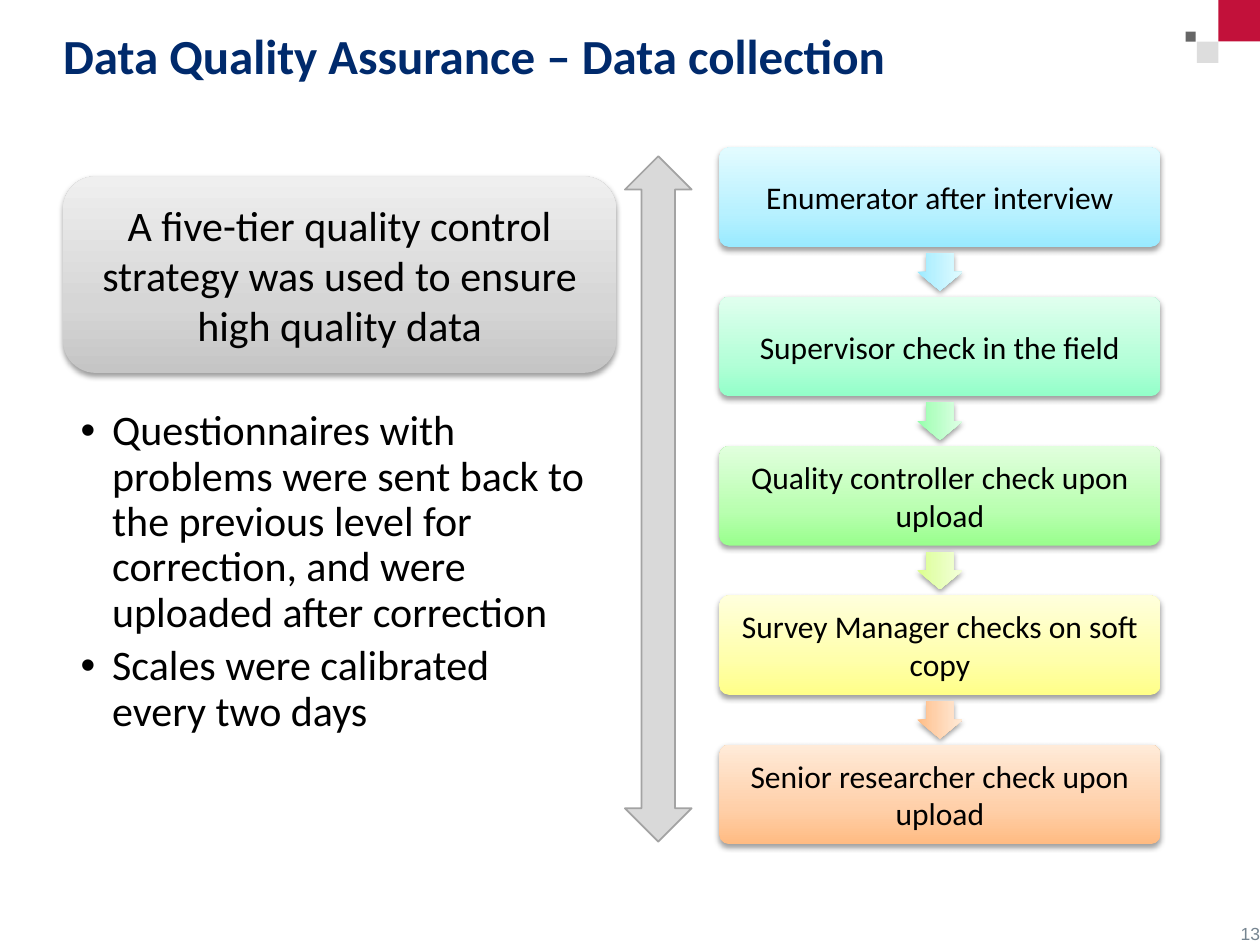
from copy import deepcopy

from lxml import etree
from pptx import Presentation
from pptx import util as u
from pptx.dml import color
from pptx.enum import shapes, text
from pptx.oxml import ns

BLACK = "000000"
GREY = ("C5C5C5", "D6D6D6", "EFEFEF")
BLUE = ("99EAFF", "B8F1FF", "E2FBFF")
ORANGE = ("FFBB82", "FFCFA8", "FFEBD9")
STEPS = [
    ("Enumerator after interview", BLUE, BLUE),
    ("Supervisor check in the field", ("93FFC9", "B4FFD8", "E0FFEE"),
     ("92FFAA", "B3FFC2", "E0FFE7")),
    ("Quality controller check upon upload", ("99FF8D", "B9FFB0", "E1FFDD"),
     ("DCFF8A", "E3FFAE", "F5FFDC")),
    ("Survey Manager checks on soft copy", ("FFFF88", "FFFFAB", "FFFFDC"), ORANGE),
    ("Senior researcher check upon upload", ORANGE, None),
]
BULLETS = [
    "Questionnaires with problems were sent back to the previous level for "
    "correction, and were uploaded after correction",
    "Scales were calibrated every two days",
]


def rgb(value):
    return color.RGBColor.from_string(value)


def inches(values):
    return [u.Inches(value) for value in values]


def add_child(parent, tag, **attributes):
    return etree.SubElement(parent, ns.qn(tag), attributes)


def add_shape(page, kind, place, adjustments=()):
    shape = page.shapes.add_shape(kind, *inches(place))
    shape.shadow.inherit = False
    for index, value in enumerate(adjustments):
        shape.adjustments[index] = value
    return shape


def add_flat(page, kind, place, fill, line=None):
    shape = add_shape(page, kind, place)
    shape.fill.solid()
    shape.fill.fore_color.rgb = rgb(fill)
    if line:
        shape.line.color.rgb = rgb(line)
        shape.line.width = u.Pt(1)
    else:
        shape.line.fill.background()
    return shape


def add_glossy(page, kind, place, adjustments, colours):
    shape = add_shape(page, kind, place, adjustments)
    shape.line.fill.background()
    shape.fill.gradient()
    shape.fill.gradient_angle = 90
    properties = shape._element.spPr
    stop_list = properties.find(".//" + ns.qn("a:gsLst"))
    stop_list.insert(1, deepcopy(stop_list[0]))
    for stop, position, colour in zip(shape.fill.gradient_stops, (0, 0.35, 1), colours):
        stop.position = position
        stop.color.rgb = rgb(colour)
    effects = properties.find(ns.qn("a:effectLst"))
    shadow = add_child(effects, "a:outerShdw", blurRad="40000", dist="20000",
                       dir="5400000", rotWithShape="0")
    shade = add_child(shadow, "a:srgbClr", val=BLACK)
    add_child(shade, "a:alpha", val="38000")
    return shape


def set_text(box, lines, size, colour=BLACK, face="Calibri", bold=False,
             align=text.PP_ALIGN.LEFT, anchor=text.MSO_ANCHOR.TOP, insets=(0, 0, 0, 0)):
    frame = box.text_frame
    frame.word_wrap = True
    frame.vertical_anchor = anchor
    (frame.margin_left, frame.margin_top,
     frame.margin_right, frame.margin_bottom) = inches(insets)
    frame.text = "\n".join(lines)
    for para in frame.paragraphs:
        para.alignment = align
        for span in para.runs:
            span.font.name = face
            span.font.size = u.Pt(size)
            span.font.bold = bold
            span.font.color.rgb = rgb(colour)


def add_text(page, place, lines, size, **style):
    box = page.shapes.add_textbox(*inches(place))
    set_text(box, lines, size, **style)
    return box


def add_panel(page, place, corner, colours, label, size):
    panel = add_glossy(page, shapes.MSO_SHAPE.ROUNDED_RECTANGLE, place, [corner], colours)
    set_text(panel, [label], size, align=text.PP_ALIGN.CENTER,
             anchor=text.MSO_ANCHOR.MIDDLE, insets=(0.1, 0.1, 0.1, 0.1))


def add_bullets(page, place, lines):
    box = add_text(page, place, lines, 24, insets=(0.14, 0.03, 0.19, 0.03))
    for index, para in enumerate(box.text_frame.paragraphs):
        para.line_spacing = 0.9
        if index:
            para.space_before = u.Pt(4.8)
        properties = para._p.get_or_add_pPr()
        properties.set("marL", str(u.Inches(0.25)))
        properties.set("indent", str(u.Inches(-0.25)))
        add_child(properties, "a:buFont", typeface="Arial")
        add_child(properties, "a:buChar", char="•")


def add_steps(page, left, top, width, height, pitch):
    arrow_width, arrow_height = 0.3, 0.36
    arrow_left = left + (width - arrow_width) / 2
    for index, (label, colours, arrow_colours) in enumerate(STEPS):
        step_top = top + index * pitch
        add_panel(page, (left, step_top, width, height), 0.1, colours, label, 18)
        if arrow_colours:
            arrow_top = step_top + (height + pitch - arrow_height) / 2
            arrow = add_glossy(page, shapes.MSO_SHAPE.RIGHT_ARROW,
                               (arrow_left, arrow_top, arrow_width, arrow_height),
                               (0.6, 0.5), arrow_colours)
            arrow.rotation = 90


def add_corner_squares(page):
    for left, top, side, fill in [(9.41, 0.25, 0.08, "666666"),
                                  (9.5, 0.33, 0.17, "DDDDDD"),
                                  (9.67, 0, 0.33, "C2113A")]:
        add_flat(page, shapes.MSO_SHAPE.RECTANGLE, (left, top, side, side), fill)


def main():
    deck = Presentation()
    deck.slide_width, deck.slide_height = inches((10, 7.5))
    page = deck.slides.add_slide(deck.slide_layouts[6])
    add_corner_squares(page)
    add_text(page, (0.5, 0.2, 8.91, 0.78), ["Data Quality Assurance – Data collection"],
             28, colour="002A6C", bold=True)
    add_panel(page, (0.5, 1.4, 4.39, 1.56), 0.167, GREY,
              "A five-tier quality control strategy was used to ensure high quality data", 24)
    add_bullets(page, (0.5, 3.22, 4.39, 2.58), BULLETS)
    add_steps(page, 5.71, 1.17, 3.5, 0.79, 1.185)
    add_flat(page, shapes.MSO_SHAPE.UP_DOWN_ARROW, (4.96, 1.24, 0.53, 5.44),
             "D9D9D9", line="A3A3A3")
    add_text(page, (9.67, 7.19, 0.33, 0.3), ["13"], 10, colour="768591", face="Arial",
             align=text.PP_ALIGN.RIGHT, anchor=text.MSO_ANCHOR.BOTTOM)
    deck.save("out.pptx")


if __name__ == "__main__":
    main()
